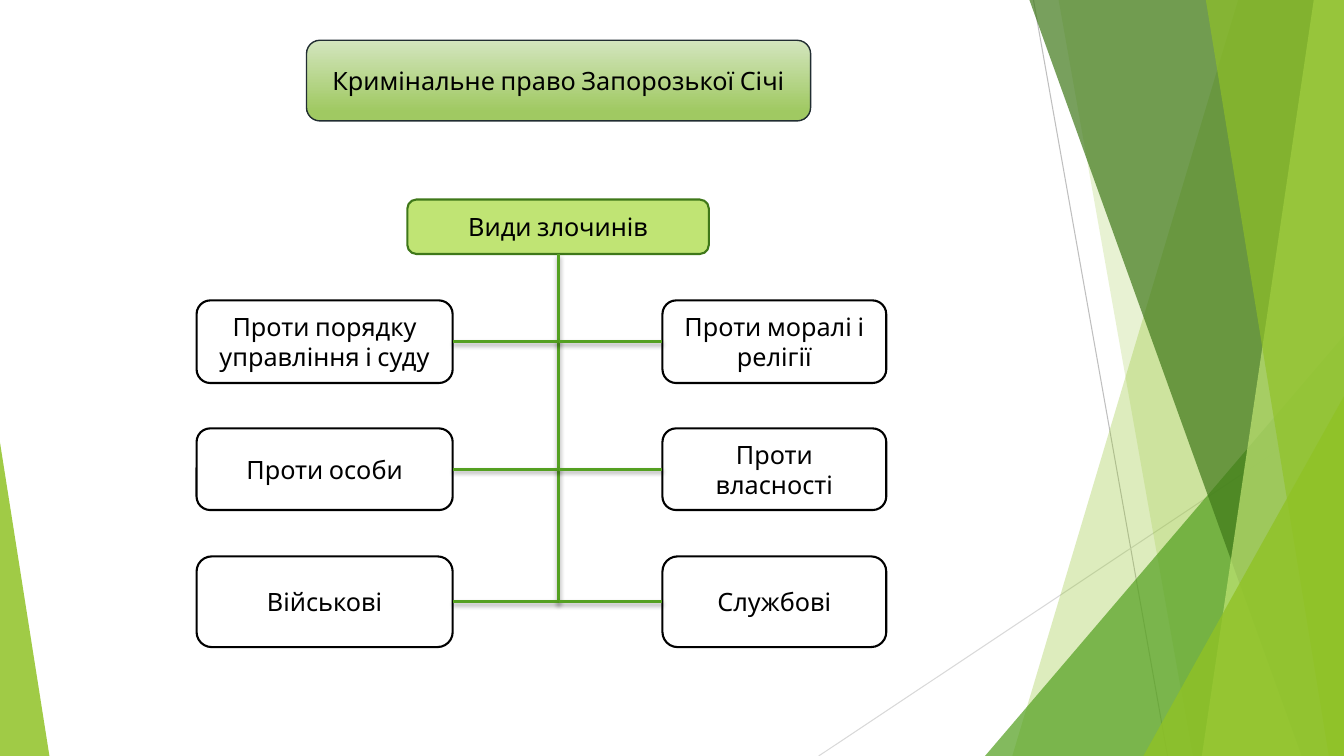
from lxml import etree
from pptx import Presentation
from pptx import util as u
from pptx.dml.color import RGBColor
from pptx.enum import shapes, text
from pptx.oxml import parse_xml
from pptx.oxml.ns import nsdecls, qn

COLORS = {
    "black": "000000", "white": "FFFFFF", "slate": "212D32",
    "grey": "BFBFBF", "pale_grey": "D9D9D9",
    "leaf": "90C226", "green": "54A021", "forest": "3F7819", "lime": "C0E474",
    "title_top": "D3E5BE", "title_bottom": "A0C962",
}
WIDTH, HEIGHT = 13.33, 7.5
SHADOW = (
    '<a:outerShdw blurRad="38100" dist="25400" dir="5400000" rotWithShape="0">'
    '<a:srgbClr val="000000"><a:alpha val="35000"/></a:srgbClr></a:outerShdw>'
)


def rgb(name):
    return RGBColor.from_string(COLORS[name])


def write(tf, content, size=18, color="black", align=text.PP_ALIGN.CENTER, font="Cabin"):
    """Put each line of content in its own paragraph."""
    tf.word_wrap = True
    tf.vertical_anchor = text.MSO_ANCHOR.MIDDLE
    for i, line in enumerate(content.split("\n")):
        p = tf.add_paragraph() if i else tf.paragraphs[0]
        p.alignment = align
        r = p.add_run()
        r.text = line
        r.font.size = u.Pt(size)
        r.font.name = font
        r.font.color.rgb = rgb(color)


class Diagram:
    def __init__(self, slide):
        self.shapes = slide.shapes

    def tint(self, sp, color, opacity):
        """Fill without outline, opacity in percent."""
        sp.shadow.inherit = False
        sp.line.fill.background()
        sp.fill.solid()
        sp.fill.fore_color.rgb = rgb(color)
        clr = sp.fill._xPr.find(qn("a:solidFill"))[0]
        etree.SubElement(clr, qn("a:alpha")).set("val", str(opacity * 1000))

    def facet(self, top_x, bottom_x, color, opacity):
        """Panel from a slanted left edge to the right edge of the slide."""
        points = [(top_x, 0), (WIDTH, 0), (WIDTH, HEIGHT), (bottom_x, HEIGHT)]
        points = [(u.Inches(x), u.Inches(y)) for x, y in points]
        builder = self.shapes.build_freeform(*points[0])
        builder.add_line_segments(points[1:], close=True)
        self.tint(builder.convert_to_shape(), color, opacity)

    def corner(self, left, top, width, apex, color, opacity):
        """Triangle standing on the bottom edge of the slide."""
        sp = self.shapes.add_shape(
            shapes.MSO_SHAPE.ISOSCELES_TRIANGLE, u.Inches(left), u.Inches(top),
            u.Inches(width), u.Inches(HEIGHT - top))
        sp.adjustments[0] = apex
        self.tint(sp, color, opacity)

    def line(self, x1, y1, x2, y2, color="green", weight=2, shadow=SHADOW):
        sp = self.shapes.add_connector(
            shapes.MSO_CONNECTOR.STRAIGHT, *map(u.Inches, (x1, y1, x2, y2)))
        sp.line.color.rgb = rgb(color)
        sp.line.width = u.Pt(weight)
        sp._element.spPr.append(
            parse_xml(f'<a:effectLst {nsdecls("a")}>{shadow}</a:effectLst>'))

    def box(self, left, top, width, height, content, fill="white", line="black", weight=1.5):
        sp = self.shapes.add_shape(
            shapes.MSO_SHAPE.ROUNDED_RECTANGLE, *map(u.Inches, (left, top, width, height)))
        sp.shadow.inherit = False
        sp.fill.solid()
        sp.fill.fore_color.rgb = rgb(fill)
        sp.line.color.rgb = rgb(line)
        sp.line.width = u.Pt(weight)
        write(sp.text_frame, content)
        return sp

    def title(self, left, top, width, height, content):
        sp = self.box(left, top, width, height, content, line="slate", weight=1)
        sp.fill.gradient()
        sp.fill.gradient_angle = 270
        stops = zip(sp.fill.gradient_stops, ("title_top", "title_bottom"), (0, 0.88))
        for stop, color, position in stops:
            stop.color.rgb = rgb(color)
            stop.position = position


def draw_backdrop(d):
    d.line(10.25, 0, 11.58, HEIGHT, "grey", 0.75, shadow="")
    d.line(WIDTH, 4.03, 8.12, HEIGHT, "pale_grey", 0.75, shadow="")
    d.facet(12.28, 10.04, "leaf", 30)
    d.facet(10.5, 11.83, "leaf", 20)
    d.corner(9.77, 3.33, 3.56, 1, "green", 72)
    d.facet(10.21, 12.91, "forest", 70)
    d.facet(13.03, 11.92, "lime", 70)
    d.facet(11.96, 13.18, "leaf", 65)
    d.corner(11.34, 3.93, 1.99, 1, "leaf", 80)
    d.corner(0, 4.39, 0.49, 0, "leaf", 85)


def draw_crimes(d):
    trunk_x = 5.54
    left_x, left_width = 1.95, 2.54
    right_x, right_width = 6.57, 2.22
    rows = [  # top, height, left crime, right crime
        (2.98, 0.82, "Проти порядку\nуправління і суду", "Проти моралі і\nрелігії"),
        (4.25, 0.81, "Проти особи", "Проти власності"),
        (5.52, 0.9, "Військові", "Службові"),
    ]
    d.title(3.04, 0.4, 5, 0.8, "Кримінальне право Запорозької Січі")
    d.box(4.04, 1.98, 2.99, 0.54, "Види злочинів", "lime", "forest")
    d.line(trunk_x, 2.52, trunk_x, 5.97)
    for top, height, left_crime, right_crime in rows:
        middle = top + height / 2
        d.box(left_x, top, left_width, height, left_crime)
        d.box(right_x, top, right_width, height, right_crime)
        d.line(left_x + left_width, middle, trunk_x, middle)
        d.line(trunk_x, middle, right_x, middle)


def main():
    prs = Presentation()
    prs.slide_width, prs.slide_height = u.Inches(WIDTH), u.Inches(HEIGHT)
    d = Diagram(prs.slides.add_slide(prs.slide_layouts[6]))
    draw_backdrop(d)
    draw_crimes(d)
    prs.save("out.pptx")


if __name__ == "__main__":
    main()
